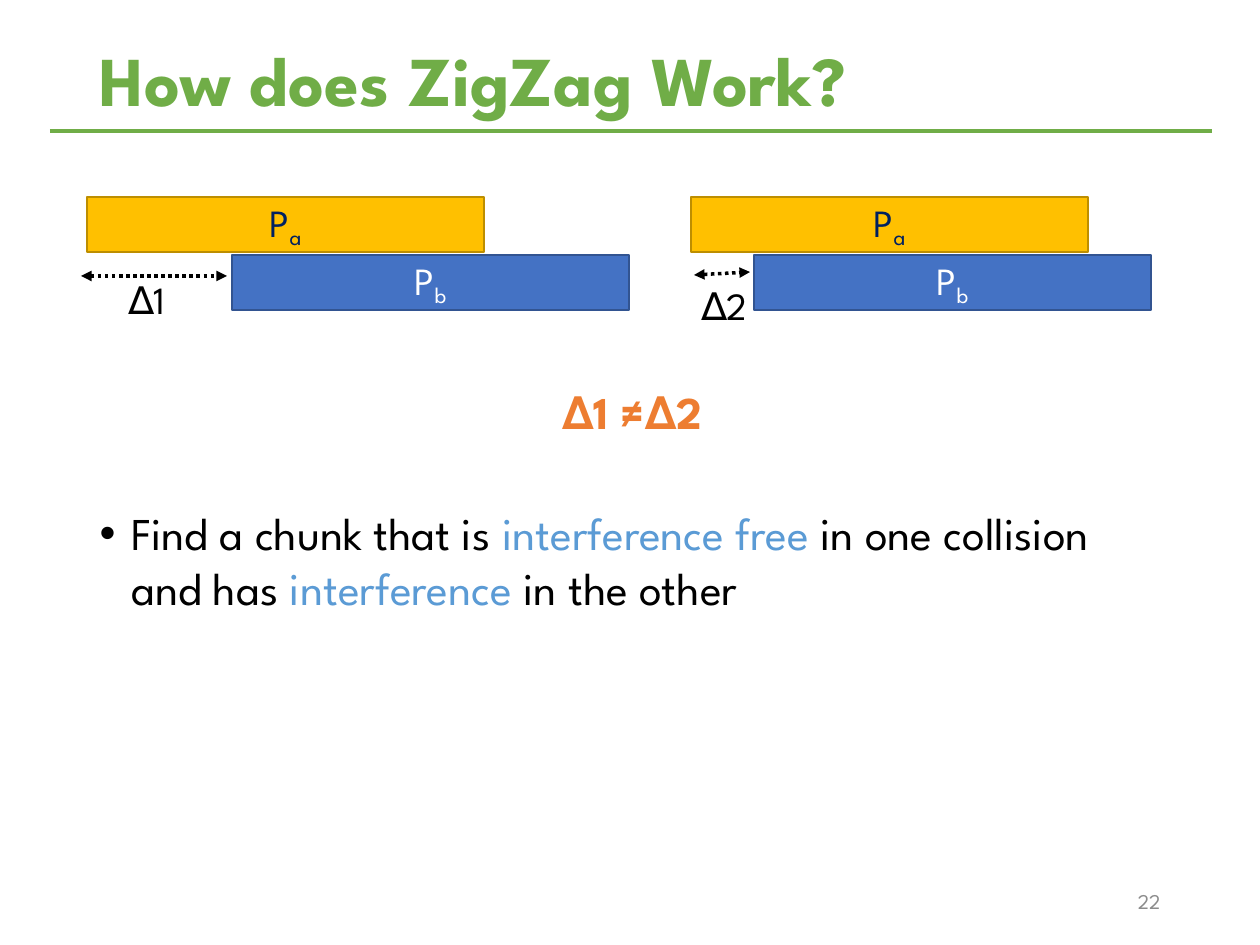
from lxml import etree
from pptx import Presentation
from pptx.dml.color import RGBColor
from pptx.enum.dml import MSO_LINE
from pptx.enum.shapes import MSO_CONNECTOR, MSO_SHAPE
from pptx.enum.text import MSO_ANCHOR, MSO_AUTO_SIZE, PP_ALIGN
from pptx.oxml.ns import qn
from pptx.util import Emu, Pt

RECT = MSO_SHAPE.RECTANGLE
STRAIGHT = MSO_CONNECTOR.STRAIGHT
DOTTED = MSO_LINE.ROUND_DOT
LEFT, CENTER, RIGHT = PP_ALIGN.LEFT, PP_ALIGN.CENTER, PP_ALIGN.RIGHT
TOP, MIDDLE = MSO_ANCHOR.TOP, MSO_ANCHOR.MIDDLE
NO_FIT = MSO_AUTO_SIZE.NONE

FONT = "League Spartan"
PX_PER_INCH = 126
PACKET_W, PACKET_H = 397, 55
TOP_ROW, BOTTOM_ROW = 197, 255
COLORS = {
    "green": "70AD47", "black": "000000", "sky": "5B9BD5", "grey": "8C8C8C",
    "amber": "FFC000", "amber_edge": "BD8E00", "navy": "002060",
    "blue": "4472C4", "blue_edge": "325491", "white": "FFFFFF",
    "orange": "ED7D31",
}


def px(n):
    return Emu(round(n * 914400 / PX_PER_INCH))


def rgb(name):
    return RGBColor.from_string(COLORS[name])


def add_run(p, text, size, color, bold=False, subscript=False):
    r = p.add_run()
    r.text = text
    r.font.name, r.font.size, r.font.bold = FONT, Pt(size), bold
    r.font.color.rgb = rgb(color)
    if subscript:
        r.font._element.set("baseline", "-20000")


def setup_text(s, align=LEFT, anchor=TOP):
    """Prepare the text frame and return its first paragraph."""
    tf = s.text_frame
    tf.word_wrap, tf.auto_size, tf.vertical_anchor = True, NO_FIT, anchor
    p = tf.paragraphs[0]
    p.alignment = align
    return p


def place(s, x, y, w, h):
    s.left, s.top, s.width, s.height = px(x), px(y), px(w), px(h)


def set_title(slide, text):
    s = slide.shapes.title
    place(s, 87, 37, 1086, 93)
    p = setup_text(s, anchor=MIDDLE)
    p.line_spacing = 0.9
    add_run(p, text, 40, "green", bold=True)


def set_bullet(slide, runs):
    s = slide.placeholders[1]
    place(s, 87, 499, 1086, 353)
    p = setup_text(s)
    p.space_before = Pt(12)
    pPr = p._p.get_or_add_pPr()
    pPr.set("marL", str(914400 // 4))
    pPr.set("indent", str(-914400 // 4))
    etree.SubElement(pPr, qn("a:buFont"), typeface="Arial")
    etree.SubElement(pPr, qn("a:buChar"), char="•")
    for text, color in runs:
        add_run(p, text, 26, color)


def add_text(slide, x, y, w, h, text, size, color, align=LEFT, anchor=TOP, bold=False):
    s = slide.shapes.add_textbox(px(x), px(y), px(w), px(h))
    add_run(setup_text(s, align, anchor), text, size, color, bold)


def add_line(slide, x1, y1, x2, y2, color, width):
    s = slide.shapes.add_connector(STRAIGHT, px(x1), px(y1), px(x2), px(y2))
    s.line.color.rgb, s.line.width = rgb(color), Pt(width)
    etree.SubElement(s._element.spPr, qn("a:effectLst"))
    return s


def add_offset_arrow(slide, x1, y1, x2, y2):
    """Dotted line with an arrowhead at each end."""
    s = add_line(slide, x1, y1, x2, y2, "black", 2)
    s.line.dash_style = DOTTED
    ln = s.line._get_or_add_ln()
    for end in ("a:headEnd", "a:tailEnd"):
        etree.SubElement(ln, qn(end), type="triangle")


def add_packet(slide, x, y, sub, fill, edge, color):
    s = slide.shapes.add_shape(RECT, px(x), px(y), px(PACKET_W), px(PACKET_H))
    s.shadow.inherit = False
    s.fill.solid()
    s.fill.fore_color.rgb = rgb(fill)
    s.line.color.rgb, s.line.width = rgb(edge), Pt(1)
    p = setup_text(s, CENTER, MIDDLE)
    tf = s.text_frame
    tf.margin_left = tf.margin_right = tf.margin_top = tf.margin_bottom = 0
    add_run(p, "P", 22, color)
    add_run(p, sub, 22, color, subscript=True)


def add_collision(slide, xa, xb, arrow, label, label_x, label_y):
    """Two overlapping packets, with their offset marked below the first."""
    add_offset_arrow(slide, *arrow)
    add_text(slide, label_x, label_y, 105, 59, label, 22, "black")
    add_packet(slide, xa, TOP_ROW, "a", "amber", "amber_edge", "navy")
    add_packet(slide, xb, BOTTOM_ROW, "b", "blue", "blue_edge", "white")


def main():
    prs = Presentation()
    prs.slide_width, prs.slide_height = px(1260), px(945)
    slide = prs.slides.add_slide(prs.slide_layouts[1])
    add_line(slide, 50, 131, 1212, 131, "green", 2.75)
    set_title(slide, "How does ZigZag Work?")
    set_bullet(slide, [
        ("Find a chunk that is ", "black"),
        ("interference free", "sky"),
        (" in one collision and has ", "black"),
        ("interference", "sky"),
        (" in the other", "black"),
    ])
    add_collision(slide, 87, 232, (81, 276, 227, 276), "∆1", 116, 270)
    add_collision(slide, 691, 754, (694, 275, 750, 272), "∆2", 689, 276)
    add_text(slide, 261, 378, 755, 73, "∆1 ≠∆2 ", 26, "orange", CENTER, bold=True)
    add_text(slide, 890, 876, 283, 50, "22", 12, "grey", RIGHT, MIDDLE)
    prs.save("out.pptx")


if __name__ == "__main__":
    main()
